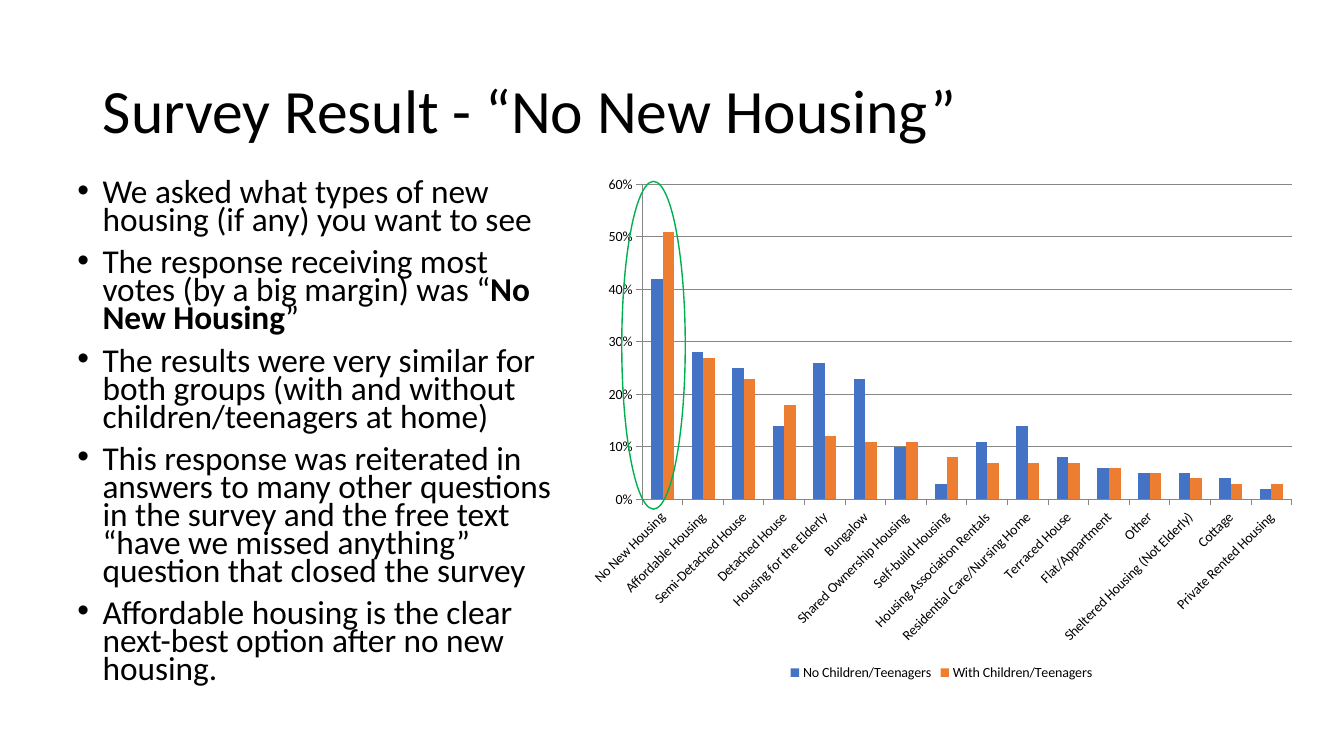
import pptx
import pptx.chart.data
import pptx.dml.color
import pptx.enum.chart
import pptx.enum.shapes
import pptx.enum.text
import pptx.oxml
import pptx.oxml.ns
import pptx.util
from pptx.util import Cm

FONT = "Calibri"
COLOURS = {"text": "000000", "without": "4472C4", "with": "ED7D31",
           "highlight": "00B050", "grid": "878787"}

TITLE = "Survey Result - “No New Housing”"
# Each bullet is a list of (wording, bold) spans
BULLETS = [
    [("We asked what types of new housing (if any) you want to see", False)],
    [("The response receiving most votes (by a big margin) was “", False),
     ("No New Housing", True), ("”", False)],
    [("The results were very similar for both groups (with and without "
      "children/teenagers at home)", False)],
    [("This response was reiterated in answers to many other questions in the survey "
      "and the free text “have we missed anything” question that closed the survey", False)],
    [("Affordable housing is the clear next-best option after no new housing.", False)],
]
# Housing type: share without children, share with children
VOTES = {
    "No New Housing": (0.42, 0.51),
    "Affordable Housing": (0.28, 0.27),
    "Semi-Detached House": (0.25, 0.23),
    "Detached House": (0.14, 0.18),
    "Housing for the Elderly": (0.26, 0.12),
    "Bungalow": (0.23, 0.11),
    "Shared Ownership Housing": (0.1, 0.11),
    "Self-build Housing": (0.03, 0.08),
    "Housing Association Rentals": (0.11, 0.07),
    "Residential Care/Nursing Home": (0.14, 0.07),
    "Terraced House": (0.08, 0.07),
    "Flat/Appartment": (0.06, 0.06),
    "Other": (0.05, 0.05),
    "Sheltered Housing (Not Elderly)": (0.05, 0.04),
    "Cottage": (0.04, 0.03),
    "Private Rented Housing": (0.02, 0.03),
}
GROUPS = {"No Children/Teenagers": "without", "With Children/Teenagers": "with"}


class SlideBuilder:
    def __init__(self, page):
        self.page = page

    def colour(self, name):
        return pptx.dml.color.RGBColor.from_string(COLOURS[name])

    def style(self, font, size, bold=False):
        font.name, font.size, font.bold = FONT, pptx.util.Pt(size), bold
        font.color.rgb = self.colour("text")

    def text_frame(self, left, top, width, height, anchor):
        box = self.page.shapes.add_textbox(Cm(left), Cm(top), Cm(width), Cm(height))
        box.text_frame.word_wrap = True
        box.text_frame.vertical_anchor = anchor
        return box.text_frame

    def title(self, text, *place):
        frame = self.text_frame(*place, pptx.enum.text.MSO_ANCHOR.MIDDLE)
        frame.text = text
        para = frame.paragraphs[0]
        para.line_spacing = 0.9
        self.style(para.runs[0].font, 44)

    def bullets(self, items, *place):
        frame = self.text_frame(*place, pptx.enum.text.MSO_ANCHOR.TOP)
        for index, spans in enumerate(items):
            para = frame.add_paragraph() if index else frame.paragraphs[0]
            para.line_spacing = 0.7
            para.space_before = pptx.util.Pt(10 if index else 0)
            props = para._p.get_or_add_pPr()
            props.set("marL", str(Cm(0.635)))
            props.set("indent", str(-Cm(0.635)))
            for tag, key, value in (("buFont", "typeface", "Arial"), ("buChar", "char", "•")):
                mark = pptx.oxml.ns.qn("a:" + tag)
                props.append(props.makeelement(mark, {key: value}))
            for wording, bold in spans:
                span = para.add_run()
                span.text = wording
                self.style(span.font, 23.8, bold)

    def column_chart(self, votes, groups, *place):
        data = pptx.chart.data.CategoryChartData(number_format="0%")
        data.categories = list(votes)
        for name, shares in zip(groups, zip(*votes.values())):
            data.add_series(name, shares)
        chart = self.page.shapes.add_chart(
            pptx.enum.chart.XL_CHART_TYPE.COLUMN_CLUSTERED, *map(Cm, place), data).chart
        chart.has_title = False
        self.style(chart.font, 10)
        chart.has_legend = True
        chart.legend.position = pptx.enum.chart.XL_LEGEND_POSITION.BOTTOM
        chart.legend.include_in_layout = False

        # Columns
        plot = chart.plots[0]
        plot.gap_width, plot.overlap, plot.vary_by_categories = 150, 0, False
        for series, name in zip(plot.series, groups.values()):
            series.format.fill.solid()
            series.format.fill.fore_color.rgb = self.colour(name)

        # Axes
        shares, types = chart.value_axis, chart.category_axis
        shares.minimum_scale, shares.maximum_scale, shares.major_unit = 0, 0.6, 0.1
        shares.tick_labels.number_format = "0%"
        shares.tick_labels.number_format_is_linked = False
        shares.has_major_gridlines = True
        for part in (shares, types, shares.major_gridlines):
            part.format.line.color.rgb = self.colour("grid")
            part.format.line.width = pptx.util.Pt(0.75)
        for axis in (shares, types):
            axis.major_tick_mark = pptx.enum.chart.XL_TICK_MARK.OUTSIDE
            self.style(axis.tick_labels.font, 10)
        slant = types._element.find(".//" + pptx.oxml.ns.qn("a:bodyPr"))
        slant.set("rot", "-2700000")
        slant.set("vert", "horz")

        # Plot area, as fractions of the chart
        area = chart._chartSpace.chart.plotArea
        for layout in area.findall(pptx.oxml.ns.qn("c:layout")):
            area.remove(layout)
        sizes = "".join(f'<c:{key} val="{value}"/>' for key, value in
                        (("x", 0.09), ("y", 0.035), ("w", 0.89), ("h", 0.608)))
        area.insert(0, pptx.oxml.parse_xml(
            f'<c:layout {pptx.oxml.ns.nsdecls("c")}><c:manualLayout>'
            '<c:layoutTarget val="inner"/><c:xMode val="edge"/><c:yMode val="edge"/>'
            f'{sizes}</c:manualLayout></c:layout>'))

    def ring(self, *place):
        oval = self.page.shapes.add_shape(
            pptx.enum.shapes.MSO_SHAPE.OVAL, *map(Cm, place))
        oval.shadow.inherit = False
        oval.fill.background()
        oval.line.color.rgb = self.colour("highlight")
        oval.line.width = pptx.util.Pt(1)


def main():
    deck = pptx.Presentation()
    deck.slide_width, deck.slide_height = Cm(33.87), Cm(19.05)
    builder = SlideBuilder(deck.slides.add_slide(deck.slide_layouts[6]))

    # Chart with the leading answer circled
    builder.column_chart(VOTES, GROUPS, 14.53, 4.19, 18.39, 13.06)
    builder.ring(15.67, 4.57, 1.6, 8.26)

    # Title and findings
    builder.title(TITLE, 2.34, 1.02, 29.21, 3.68)
    builder.bullets(BULLETS, 1.7, 4.45, 12.85, 13.61)

    deck.save("out.pptx")


if __name__ == "__main__":
    main()
